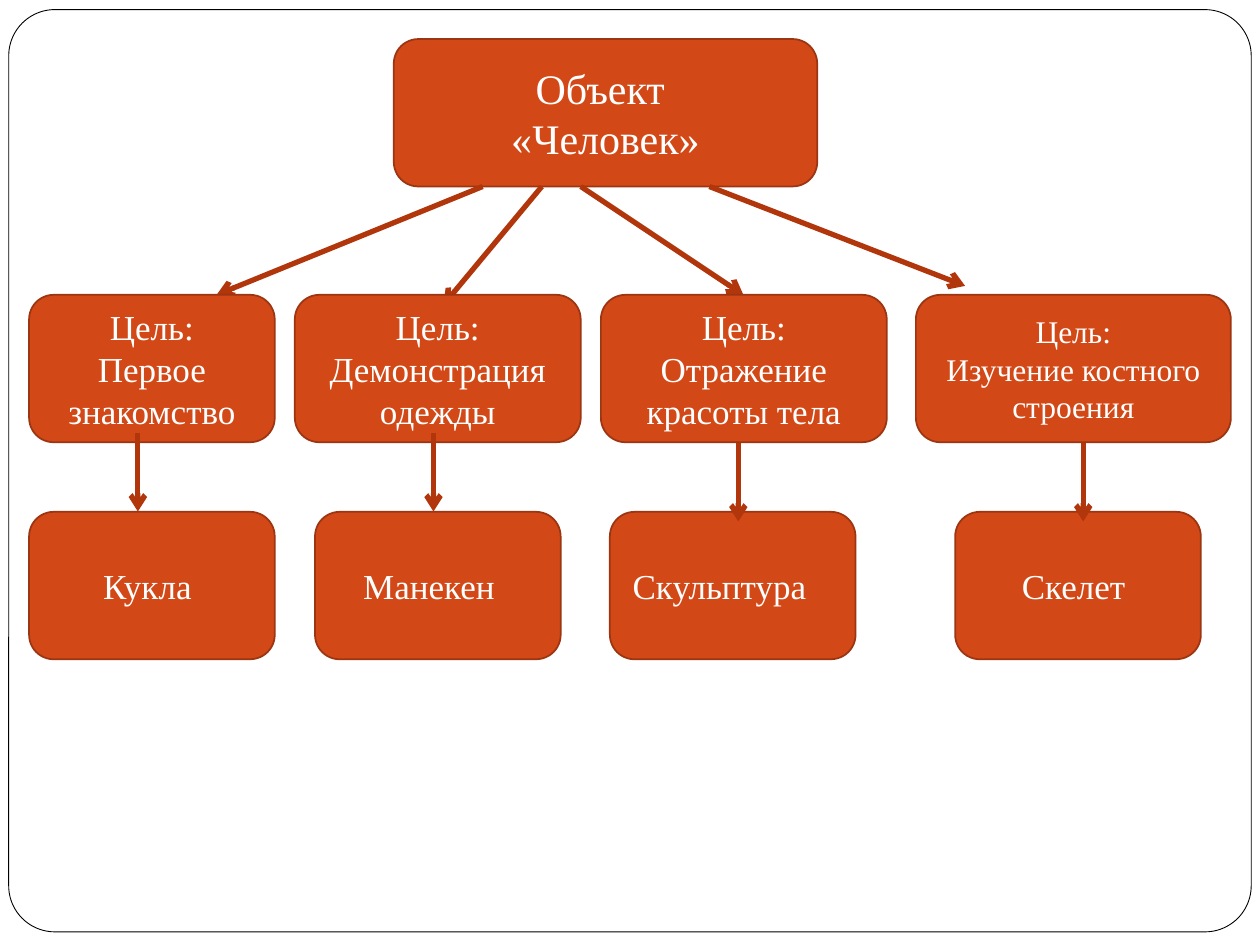
from dataclasses import dataclass

from lxml.etree import SubElement
from pptx import Presentation
from pptx.dml.color import RGBColor
from pptx.enum.shapes import MSO_CONNECTOR as Connector, MSO_SHAPE as Preset
from pptx.enum.text import MSO_ANCHOR as Anchor, PP_ALIGN as Align
from pptx.oxml.ns import qn
from pptx.shapes.autoshape import Shape
from pptx.slide import Slide
from pptx.util import Pt

FONT = "Times New Roman"
BOX_FILL, BOX_LINE, ARROW_COLOR = "D34817", "9C3511", "B1360B"
WHITE, BLACK = "FFFFFF", "000000"
BOX_HEIGHT = 84.25
ROOT_TOP, GOAL_TOP, LEAF_TOP = 22.35, 168.5, 292.5
ROOT_BOTTOM = ROOT_TOP + BOX_HEIGHT
LEAF_WIDTH = 140.4
LEAF_ARROW_LENGTH = 44.6
INSET = 7.2


@dataclass(frozen=True)
class Branch:
    goal: str
    goal_left: float
    goal_width: float
    goal_size: int
    root_arrow: tuple[float, float, float]
    leaf: str
    leaf_left: float
    leaf_indent: float
    leaf_arrow: tuple[float, float]


BRANCHES = [
    Branch("Первое знакомство", 16.6, 140.4, 20, (275.8, 123.8, 168.5),
           "Кукла", 16.6, 5, (78.8, 247.7)),
    Branch("Демонстрация одежды", 168.5, 163.4, 20, (309.6, 253.4, 174.2),
           "Манекен", 180, 10, (247.7, 247.7)),
    Branch("Отражение красоты тела", 343.4, 163.4, 20, (331.9, 424.8, 168.5),
           "Скульптура", 348.5, 15, (421.9, 253.4)),
    Branch("Изучение костного строения", 523.4, 180, 18, (405.4, 551.5, 163.4),
           "Скелет", 545.8, 5, (619, 253.4)),
]


def color(value: str) -> RGBColor:
    return RGBColor.from_string(value)


def add_panel(slide: Slide, left: float, top: float, width: float, height: float,
              fill: str, line: str, line_width: float) -> Shape:
    shape = slide.shapes.add_shape(
        Preset.ROUNDED_RECTANGLE, Pt(left), Pt(top), Pt(width), Pt(height))
    shape.shadow.inherit = False
    shape.fill.solid()
    shape.fill.fore_color.rgb = color(fill)
    shape.line.color.rgb = color(line)
    shape.line.width = Pt(line_width)
    return shape


def add_box(slide: Slide, left: float, top: float, width: float,
            lines: list[str], size: int, indent: float = 0) -> None:
    shape = add_panel(slide, left, top, width, BOX_HEIGHT, BOX_FILL, BOX_LINE, 1)
    frame = shape.text_frame
    frame.word_wrap = True
    frame.vertical_anchor = Anchor.MIDDLE
    frame.margin_right = Pt(INSET + indent)
    for index, text in enumerate(lines):
        paragraph = frame.add_paragraph() if index else frame.paragraphs[0]
        paragraph.alignment = Align.CENTER
        run = paragraph.add_run()
        run.text = text
        run.font.name = FONT
        run.font.size = Pt(size)
        run.font.color.rgb = color(WHITE)


def add_arrow(slide: Slide, start_x: float, start_y: float,
              end_x: float, end_y: float) -> None:
    connector = slide.shapes.add_connector(
        Connector.STRAIGHT, Pt(start_x), Pt(start_y), Pt(end_x), Pt(end_y))
    connector.line.color.rgb = color(ARROW_COLOR)
    connector.line.width = Pt(3)
    properties = connector.element.spPr
    SubElement(properties.find(qn("a:ln")), qn("a:tailEnd"), type="arrow")
    SubElement(properties, qn("a:effectLst"))


def add_branch(slide: Slide, branch: Branch) -> None:
    start_x, end_x, end_y = branch.root_arrow
    add_arrow(slide, start_x, ROOT_BOTTOM, end_x, end_y)
    add_box(slide, branch.goal_left, GOAL_TOP, branch.goal_width,
            ["Цель:", branch.goal], branch.goal_size)
    add_box(slide, branch.leaf_left, LEAF_TOP, LEAF_WIDTH,
            [branch.leaf], 20, branch.leaf_indent)
    arrow_x, arrow_top = branch.leaf_arrow
    add_arrow(slide, arrow_x, arrow_top, arrow_x, arrow_top + LEAF_ARROW_LENGTH)


def main() -> None:
    presentation = Presentation()
    presentation.slide_width = Pt(720)
    presentation.slide_height = Pt(540)
    slide = presentation.slides.add_slide(presentation.slide_layouts[6])
    border = add_panel(slide, 5, 5.5, 710, 527, WHITE, BLACK, 0.5)
    border.adjustments[0] = 0.05
    add_box(slide, 225, ROOT_TOP, 242, ["Объект ", "«Человек»"], 24)
    for branch in BRANCHES:
        add_branch(slide, branch)
    presentation.save("out.pptx")


if __name__ == "__main__":
    main()
